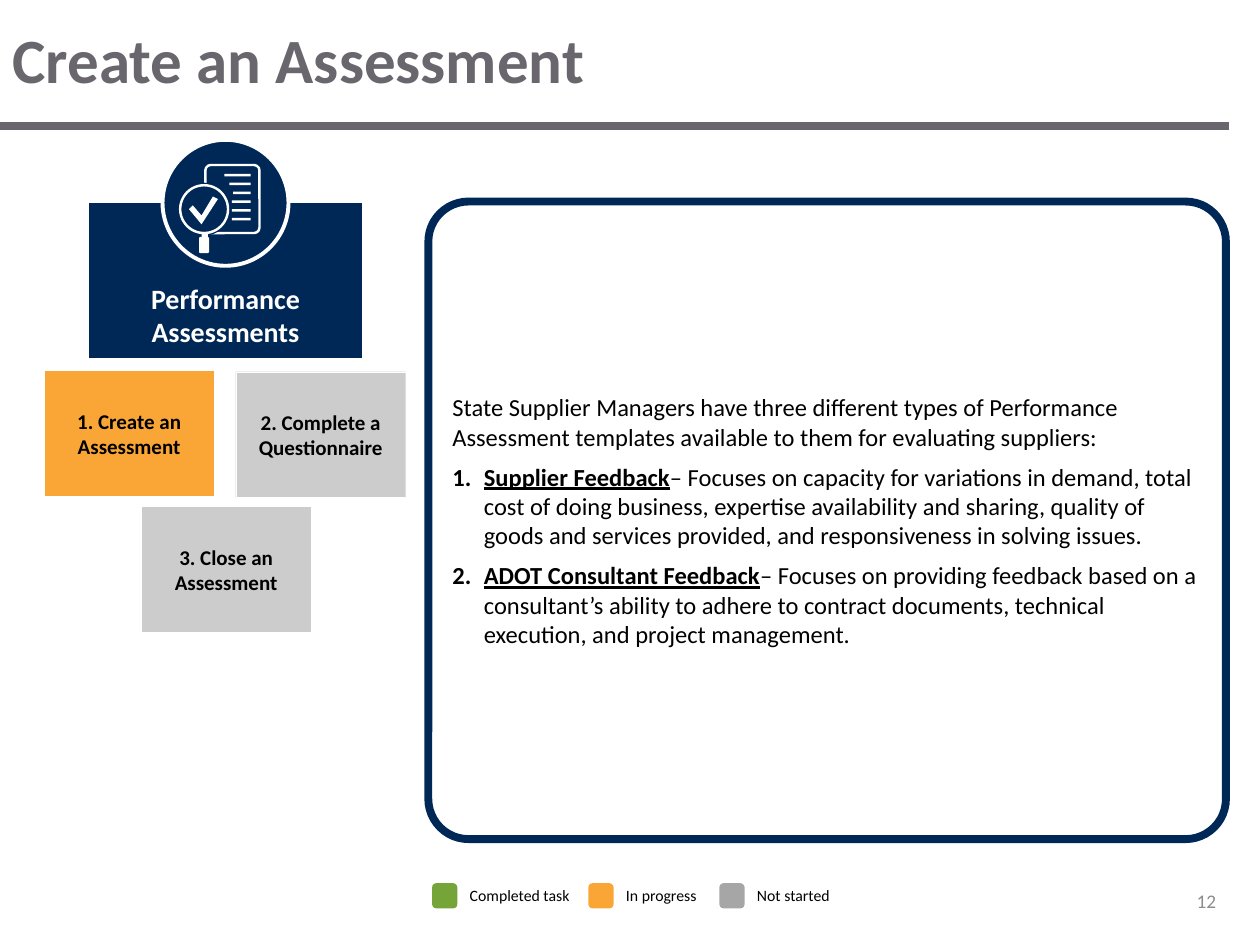
from dataclasses import dataclass

from lxml.etree import SubElement
from pptx import Presentation
from pptx.dml.color import RGBColor
from pptx.enum.shapes import MSO_CONNECTOR, MSO_SHAPE
from pptx.enum.text import MSO_ANCHOR, MSO_AUTO_SIZE, PP_ALIGN
from pptx.oxml.ns import qn
from pptx.util import Inches, Pt


@dataclass(frozen=True)
class Theme:
    """Colours and type sizes of the slide."""
    font: str = "Calibri"
    navy: str = "002857"
    slate: str = "69676D"
    orange: str = "FAA636"
    green: str = "75A439"
    light: str = "CCCCCC"
    grey: str = "A6A6A6"
    muted: str = "8C8C8C"
    white: str = "FFFFFF"
    black: str = "000000"
    title: int = 36
    heading: int = 16
    body: int = 14
    step: int = 12
    number: int = 11
    legend: int = 9


@dataclass(frozen=True)
class Box:
    """Position and size in inches."""
    x: float
    y: float
    w: float
    h: float

    def emu(self) -> tuple:
        """Return the four lengths for python-pptx."""
        return tuple(Inches(v) for v in (self.x, self.y, self.w, self.h))


@dataclass(frozen=True)
class Step:
    """One task of the process."""
    text: str
    x: float
    y: float
    fill: str


@dataclass(frozen=True)
class Status:
    """One entry of the legend."""
    text: str
    x: float
    fill: str


@dataclass(frozen=True)
class Template:
    """One assessment template in the numbered list."""
    name: str
    text: str


T = Theme()
STEPS = [
    Step("1. Create an Assessment", 0.35, 2.94, T.orange),
    Step("2. Complete a Questionnaire", 1.87, 2.95, T.light),
    Step("3. Close an Assessment", 1.12, 4.02, T.light),
]
STATUSES = [
    Status("Completed task", 3.43, T.green),
    Status("In progress", 4.67, T.orange),
    Status("Not started", 5.71, T.grey),
]
INTRO = ("State Supplier Managers have three different types of Performance "
         "Assessment templates available to them for evaluating suppliers:")
TEMPLATES = [
    Template("Supplier Feedback",
             "– Focuses on capacity for variations in demand, total cost of doing business, "
             "expertise availability and sharing, quality of goods and services provided, "
             "and responsiveness in solving issues."),
    Template("ADOT Consultant Feedback",
             "– Focuses on providing feedback based on a consultant’s ability to adhere to "
             "contract documents, technical execution, and project management."),
]


def add_run(p, text: str, size: int, color: str = T.black,
            bold: bool = False, underline: bool = False) -> None:
    """Append a formatted run to a paragraph."""
    r = p.add_run()
    r.text = text
    f = r.font
    f.name, f.size, f.bold, f.underline = T.font, Pt(size), bold, underline
    f.color.rgb = RGBColor.from_string(color)


def paint(sp, fill: str = "", line: str = "", width: float = 0) -> None:
    """Set fill and outline and switch the shadow off."""
    sp.shadow.inherit = False
    if fill:
        sp.fill.solid()
        sp.fill.fore_color.rgb = RGBColor.from_string(fill)
    else:
        sp.fill.background()
    if line:
        sp.line.color.rgb = RGBColor.from_string(line)
        sp.line.width = Pt(width)
    else:
        sp.line.fill.background()


def add_box(s, kind, box: Box, fill: str = "", line: str = "", width: float = 0):
    """Draw a preset shape."""
    sp = s.shapes.add_shape(kind, *box.emu())
    paint(sp, fill, line, width)
    return sp


def add_label(s, box: Box, text: str, size: int, color: str = T.black, bold: bool = False,
              align=PP_ALIGN.LEFT, anchor=MSO_ANCHOR.TOP) -> None:
    """Draw a wrapped text box with one run."""
    tf = s.shapes.add_textbox(*box.emu()).text_frame
    tf.word_wrap, tf.vertical_anchor = True, anchor
    p = tf.paragraphs[0]
    p.alignment = align
    add_run(p, text, size, color, bold)


def add_title(s, text: str) -> None:
    """Fill the title placeholder and draw the rule below it."""
    sp = s.shapes.title
    sp.left, sp.top, sp.width, sp.height = Box(0, 0, 10, 0.92).emu()
    tf = sp.text_frame
    tf.vertical_anchor = MSO_ANCHOR.MIDDLE
    p = tf.paragraphs[0]
    p.alignment = PP_ALIGN.LEFT
    add_run(p, text, T.title, T.slate, True)
    rule = s.shapes.add_connector(MSO_CONNECTOR.STRAIGHT, 0, Inches(1), Inches(9.75), Inches(1))
    rule.line.color.rgb = RGBColor.from_string(T.slate)
    rule.line.width = Pt(5)
    SubElement(rule._element.spPr, qn("a:effectLst"))


def add_step(s, step: Step) -> None:
    """Draw one task tile."""
    sp = add_box(s, MSO_SHAPE.RECTANGLE, Box(step.x, step.y, 1.35, 1), step.fill, T.white, 0.13)
    tf = sp.text_frame
    tf.margin_left = tf.margin_right = tf.margin_top = tf.margin_bottom = Inches(0.02)
    p = tf.paragraphs[0]
    p.alignment = PP_ALIGN.CENTER
    add_run(p, step.text, T.step, bold=True)


def add_status(s, status: Status) -> None:
    """Draw one legend swatch with its name."""
    add_box(s, MSO_SHAPE.ROUNDED_RECTANGLE, Box(status.x, 7.01, 0.2, 0.2), status.fill)
    add_label(s, Box(status.x + 0.2, 6.98, 1.93, 0.25), status.text, T.legend)


def add_icon(s) -> None:
    """Draw a checked document under a magnifying glass."""
    page = add_box(s, MSO_SHAPE.ROUNDED_RECTANGLE, Box(1.63, 1.31, 0.43, 0.54), "", T.white, 1.4)
    page.adjustments[0] = 0.1
    add_box(s, MSO_SHAPE.OVAL, Box(1.41, 1.45, 0.42, 0.42), T.navy)
    add_box(s, MSO_SHAPE.OVAL, Box(1.43, 1.47, 0.38, 0.38), "", T.white, 1.4)
    add_box(s, MSO_SHAPE.RECTANGLE, Box(1.6, 1.84, 0.05, 0.04), T.white)
    add_box(s, MSO_SHAPE.ROUNDED_RECTANGLE, Box(1.58, 1.88, 0.08, 0.13), T.white)
    for i, x in enumerate((1.78, 1.82, 1.85, 1.84, 1.84, 1.84)):
        add_box(s, MSO_SHAPE.RECTANGLE, Box(x, 1.38 + 0.07 * i, 1.99 - x, 0.02), T.white)
    fb = s.shapes.build_freeform(150, 166, scale=Inches(0.01))
    fb.add_line_segments([(153, 163), (160, 171), (169, 156), (173, 158), (160, 178)])
    paint(fb.convert_to_shape(), T.white)


def add_body(s) -> None:
    """Draw the panel and fill the body placeholder over it."""
    panel = add_box(s, MSO_SHAPE.ROUNDED_RECTANGLE, Box(3.4, 1.6, 6.33, 5.06), "", T.navy, 4.5)
    panel.adjustments[0] = 0.063
    sp = s.placeholders[1]
    sp.left, sp.top, sp.width, sp.height = Box(3.49, 1.69, 6.15, 4.88).emu()
    tf = sp.text_frame
    tf.auto_size, tf.vertical_anchor = MSO_AUTO_SIZE.NONE, MSO_ANCHOR.MIDDLE
    for i, item in enumerate([None, *TEMPLATES]):
        p = tf.add_paragraph() if i else tf.paragraphs[0]
        p.space_before, p.space_after = Pt(0), Pt(6)
        pPr = p._p.get_or_add_pPr()
        indent = Inches(0.25) if item else 0
        pPr.set("marL", str(indent))
        pPr.set("indent", str(-indent))
        if item:
            SubElement(pPr, qn("a:buFont"), typeface="+mj-lt")
            SubElement(pPr, qn("a:buAutoNum"), type="arabicPeriod")
            add_run(p, item.name, T.body, bold=True, underline=True)
            add_run(p, item.text, T.body)
        else:
            SubElement(pPr, qn("a:buNone"))
            add_run(p, INTRO, T.body)


def main() -> None:
    """Build the slide and save it."""
    prs = Presentation()
    prs.slide_width, prs.slide_height = Inches(10), Inches(7.5)
    s = prs.slides.add_slide(prs.slide_layouts[1])
    add_title(s, "Create an Assessment")
    add_label(s, Box(8.08, 6.95, 1.67, 0.4), "12", T.number, T.muted,
              align=PP_ALIGN.RIGHT, anchor=MSO_ANCHOR.MIDDLE)
    for step in STEPS:
        add_step(s, step)
    add_box(s, MSO_SHAPE.RECTANGLE, Box(0.69, 1.6, 2.2, 1.26), T.navy, T.white, 2)
    add_box(s, MSO_SHAPE.OVAL, Box(1.29, 1.11, 1, 1), T.navy, T.white, 2.25)
    add_label(s, Box(0.7, 2.18, 2.18, 0.64), "Performance Assessments", T.heading, T.white, True,
              PP_ALIGN.CENTER, MSO_ANCHOR.MIDDLE)
    add_icon(s)
    add_body(s)
    for status in STATUSES:
        add_status(s, status)
    prs.save("out.pptx")


if __name__ == "__main__":
    main()
